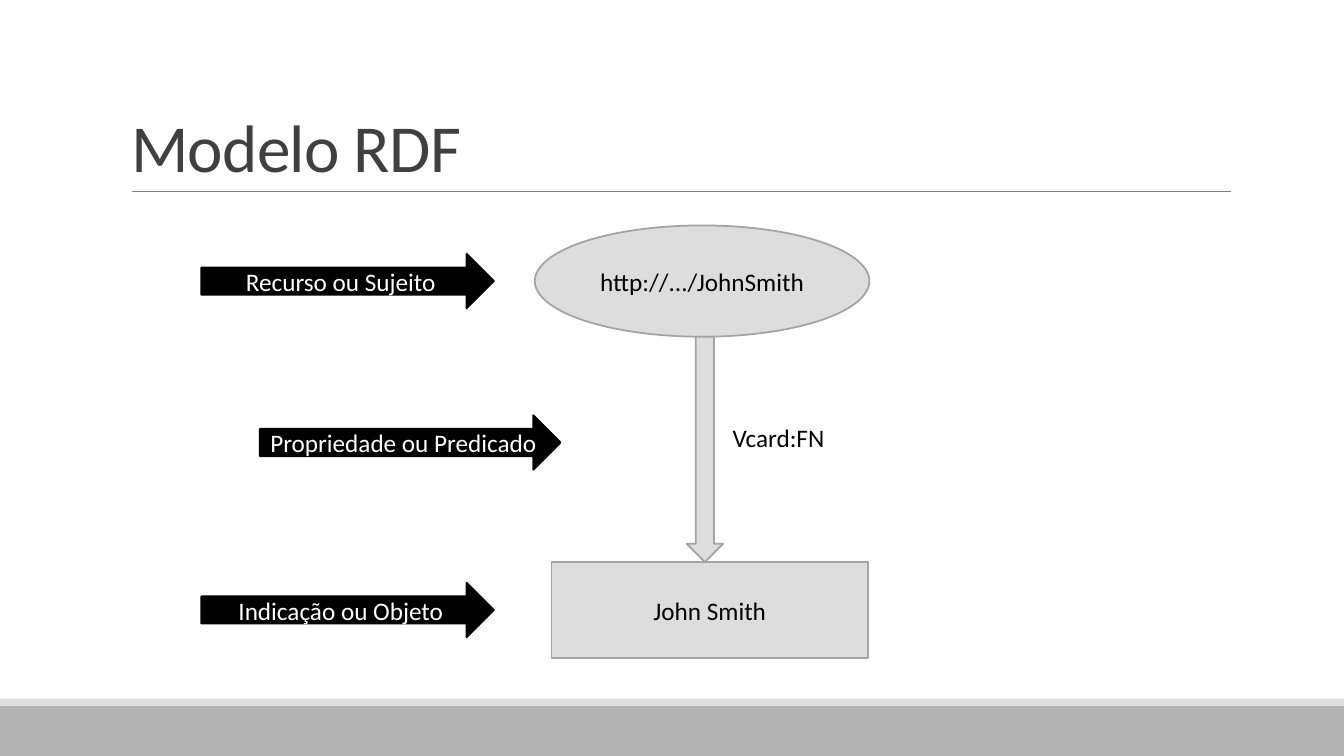
from pptx import Presentation
from pptx.dml.color import RGBColor
from pptx.enum.shapes import MSO_CONNECTOR, MSO_SHAPE
from pptx.enum.text import MSO_ANCHOR, MSO_AUTO_SIZE, PP_ALIGN
from pptx.oxml.ns import qn
from pptx.util import Pt

RECTANGLE = MSO_SHAPE.RECTANGLE
ELLIPSE = MSO_SHAPE.OVAL
DOWN_ARROW = MSO_SHAPE.DOWN_ARROW
RIGHT_ARROW = MSO_SHAPE.RIGHT_ARROW
STRAIGHT = MSO_CONNECTOR.STRAIGHT
MIDDLE, BOTTOM = MSO_ANCHOR.MIDDLE, MSO_ANCHOR.BOTTOM
LEFT, CENTER = PP_ALIGN.LEFT, PP_ALIGN.CENTER
NO_FIT, GROW = MSO_AUTO_SIZE.NONE, MSO_AUTO_SIZE.SHAPE_TO_FIT_TEXT

FONT = "Calibri"
SLIDE_WIDTH, SLIDE_HEIGHT = 960, 540
COLORS = {
    "title": "404040",
    "rule": "808080",
    "footer": "B2B2B2",
    "light": "DDDDDD",
    "outline": "A3A3A3",
    "black": "000000",
    "white": "FFFFFF",
}


def color(name):
    return RGBColor.from_string(COLORS[name])


def add_run(paragraph, text, size, text_color):
    run = paragraph.add_run()
    run.text = text
    run.font.name = FONT
    run.font.size = Pt(size)
    run.font.color.rgb = color(text_color)
    return run


def add_block(slide, kind, box, fill, outline=None, text=None, text_color="black"):
    shape = slide.shapes.add_shape(kind, *map(Pt, box))
    shape.shadow.inherit = False
    shape.fill.solid()
    shape.fill.fore_color.rgb = color(fill)
    if outline:
        shape.line.color.rgb = color(outline)
        shape.line.width = Pt(1.25)
    else:
        shape.line.fill.background()
    if text:
        shape.text_frame.vertical_anchor = MIDDLE
        paragraph = shape.text_frame.paragraphs[0]
        paragraph.alignment = CENTER
        add_run(paragraph, text, 18, text_color)


def add_rule(slide, left, right, top):
    line = slide.shapes.add_connector(STRAIGHT, Pt(left), Pt(top), Pt(right), Pt(top))
    line.line.color.rgb = color("rule")
    line.line.width = Pt(0.5)
    properties = line._element.spPr
    properties.append(properties.makeelement(qn("a:effectLst"), {}))


def set_title(slide, text):
    title = slide.shapes.title
    title.left, title.top, title.width, title.height = map(Pt, (86.4, 22.3, 792, 114.5))
    frame = title.text_frame
    frame.auto_size = NO_FIT
    frame.vertical_anchor = BOTTOM
    paragraph = frame.paragraphs[0]
    paragraph.alignment = LEFT
    paragraph.line_spacing = 0.85
    run = add_run(paragraph, text, 48, "title")
    run.font._element.set("spc", "-50")


def add_label(slide, text, box):
    label = slide.shapes.add_textbox(*map(Pt, box))
    label.text_frame.word_wrap = False
    label.text_frame.auto_size = GROW
    add_run(label.text_frame.paragraphs[0], text, 18, "black")


def main():
    presentation = Presentation()
    presentation.slide_width = Pt(SLIDE_WIDTH)
    presentation.slide_height = Pt(SLIDE_HEIGHT)
    slide = presentation.slides.add_slide(presentation.slide_layouts[5])

    add_block(slide, RECTANGLE, (0, 504, SLIDE_WIDTH, 36), "footer")
    add_block(slide, RECTANGLE, (0, 499, SLIDE_WIDTH, 5), "light")
    add_rule(slide, 94.3, 879, 136.8)
    set_title(slide, "Modelo RDF")

    add_block(slide, ELLIPSE, (382, 161, 239, 79.5), "light", "outline", "http://.../JohnSmith")
    add_block(slide, RECTANGLE, (394, 401.5, 226, 68.5), "light", "outline", "John Smith")
    add_block(slide, DOWN_ARROW, (490.5, 240.5, 26, 161), "light", "outline")
    add_label(slide, "Vcard:FN", (516.2, 298.4, 80.6, 29))

    for text, left, top, width in (
        ("Recurso ou Sujeito", 143.8, 181.3, 209),
        ("Propriedade ou Predicado", 185.6, 296.6, 214.8),
        ("Indicação ou Objeto", 143.8, 416.2, 209),
    ):
        add_block(slide, RIGHT_ARROW, (left, top, width, 39), "black", "black", text, "white")

    presentation.save("out.pptx")


if __name__ == "__main__":
    main()
